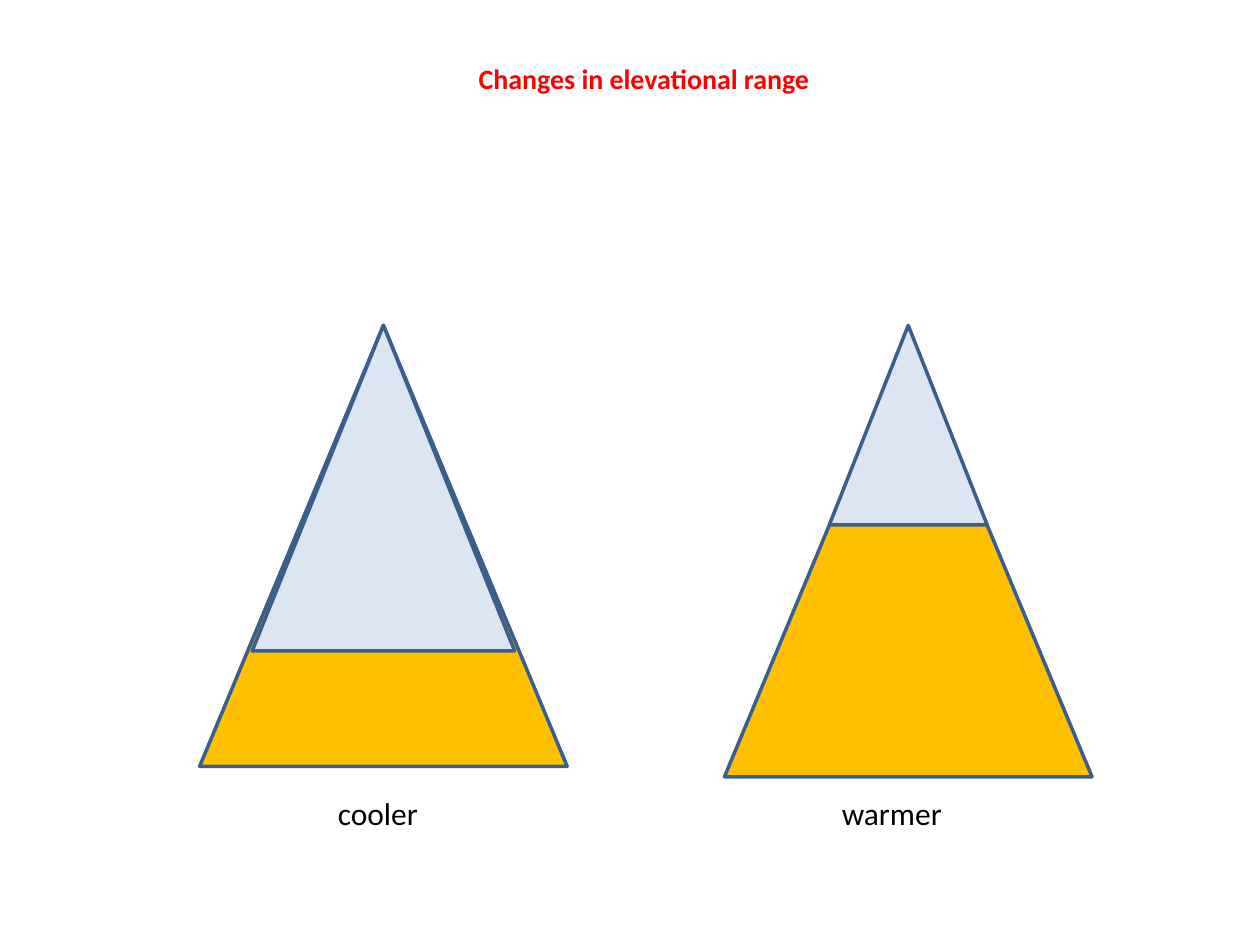
from pptx import Presentation
from pptx.dml.color import RGBColor
from pptx.enum.shapes import MSO_SHAPE
from pptx.util import Cm, Pt

TRIANGLE = MSO_SHAPE.ISOSCELES_TRIANGLE
FONT = "Calibri"
WARM_ZONE = "FFC000"
COOL_ZONE = "DCE6F2"
OUTLINE = "3A5F8C"
APEX_TOP = 6.56
MOUNTAIN_WIDTH, MOUNTAIN_HEIGHT = 7.41, 8.89
LABEL_TOP = 15.88


def color(hex_code):
    """Return the colour for a hex string."""
    return RGBColor.from_string(hex_code)


def add_text(slide, text, left, top, width, height, size=18, bold=False, ink="000000"):
    """Add a wrapped line of text at a place given in centimetres."""
    box = slide.shapes.add_textbox(Cm(left), Cm(top), Cm(width), Cm(height))
    box.text_frame.word_wrap = True
    paragraph = box.text_frame.paragraphs[0]
    paragraph.text = text
    font = paragraph.runs[0].font
    font.name, font.size, font.bold = FONT, Pt(size), bold
    font.color.rgb = color(ink)


def add_zone(slide, axis, top, width, height, fill):
    """Add an outlined triangle centred on a vertical axis."""
    zone = slide.shapes.add_shape(
        TRIANGLE, Cm(axis - width / 2), Cm(top), Cm(width), Cm(height))
    zone.shadow.inherit = False
    zone.fill.solid()
    zone.fill.fore_color.rgb = color(fill)
    zone.line.color.rgb = color(OUTLINE)
    zone.line.width = Pt(2)


def add_mountain(slide, axis, base_top, cap_width, cap_height, label, label_left):
    """Add a labelled mountain with a cool cap over its warm zone."""
    add_zone(slide, axis, base_top, MOUNTAIN_WIDTH, MOUNTAIN_HEIGHT, WARM_ZONE)
    add_zone(slide, axis, APEX_TOP, cap_width, cap_height, COOL_ZONE)
    add_text(slide, label, label_left, LABEL_TOP, 4.7, 1.03)


def main():
    """Build and save the slide."""
    deck = Presentation()
    deck.slide_width, deck.slide_height = Cm(25.4), Cm(19.05)
    slide = deck.slides.add_slide(deck.slide_layouts[6])
    add_text(slide, "Changes in elevational range", 9.4, 1.12, 10, 0.94,
             size=16, bold=True, ink="FF0000")
    add_mountain(slide, 7.73, APEX_TOP, 5.29, 6.56, "cooler", 6.56)
    add_mountain(slide, 18.31, 6.77, 3.18, 4.02, "warmer", 16.72)
    deck.save("out.pptx")


if __name__ == "__main__":
    main()
